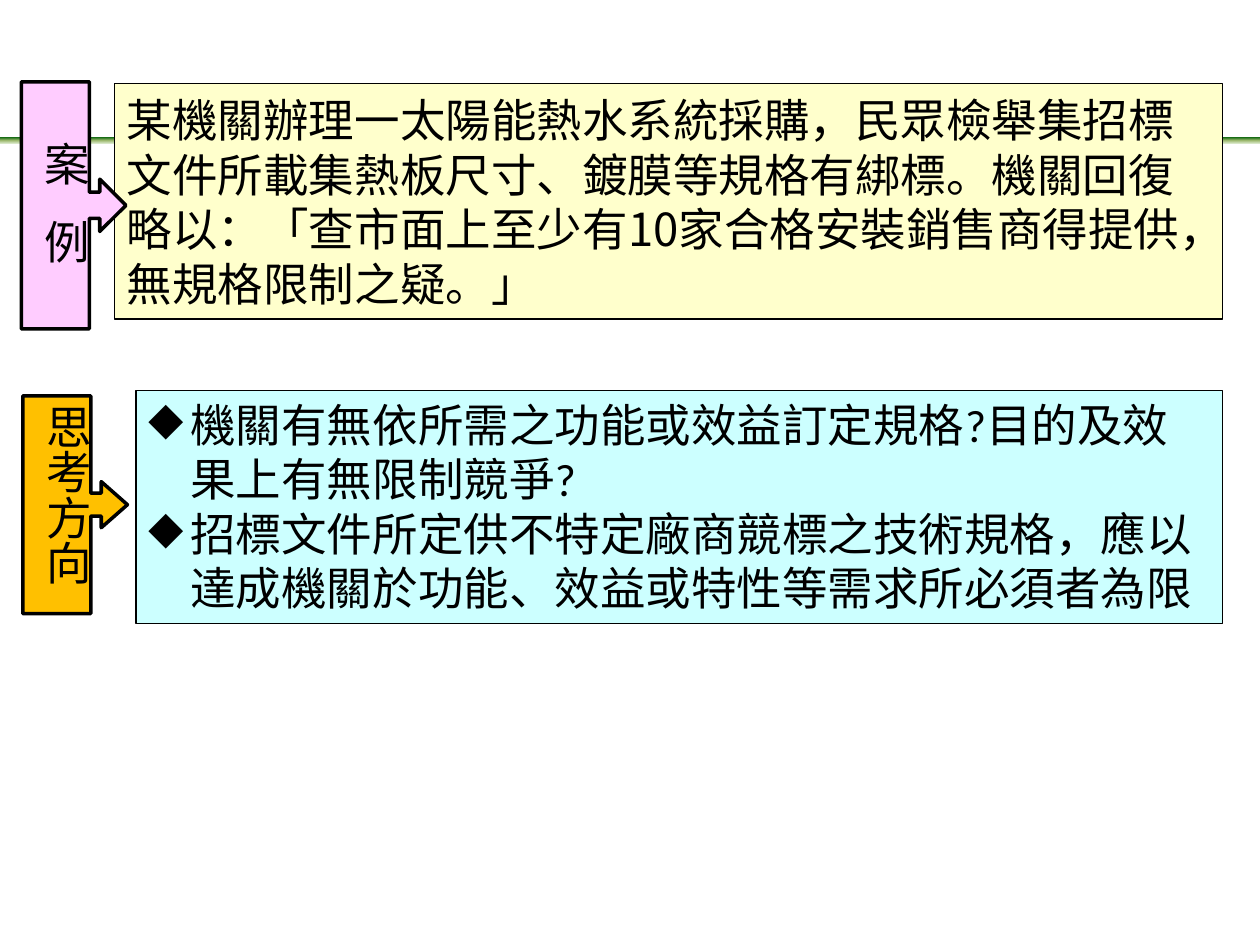
from copy import deepcopy

from lxml.etree import SubElement
from pptx import Presentation
from pptx.dml.color import RGBColor
from pptx.enum.shapes import MSO_SHAPE
from pptx.enum.text import MSO_ANCHOR, MSO_AUTO_SIZE, PP_ALIGN
from pptx.oxml.ns import qn
from pptx.util import Cm, Pt

COLORS = {
    "ink": "000000",
    "case_box": "FFFFCC",
    "case_tag": "FFCCFF",
    "thought_box": "CCFFFF",
    "thought_tag": "FFC000",
}
RULE_STOPS = [(0, "156B13"), (0.5, "9CB86E"), (1, "DDEBCF")]
CASE_FONT, BODY_FONT = "Noto Sans CJK SC", "Calibri"
HANGING = Cm(0.85)

CASE_TEXT = (
    "某機關辦理一太陽能熱水系統採購，民眾檢舉集招標文件所載集熱板尺寸、鍍膜等規格有綁標。"
    "機關回復略以：「查市面上至少有10家合格安裝銷售商得提供，無規格限制之疑。」"
)
THOUGHT_LINES = [
    (True, "機關有無依所需之功能或效益訂定規格?目的及效"),
    (False, "果上有無限制競爭?"),
    (True, "招標文件所定供不特定廠商競標之技術規格，應以"),
    (False, "達成機關於功能、效益或特性等需求所必須者為限"),
]


def rgb(name):
    return RGBColor.from_string(COLORS[name])


def style_runs(para, font_name):
    for span in para.runs:
        span.font.size = Pt(26)
        span.font.name = font_name
        span.font.color.rgb = rgb("ink")
        SubElement(span.font._element, qn("a:ea"), typeface=font_name)


def add_filled(page, preset, place, fill, line_width):
    shape = page.shapes.add_shape(preset, *map(Cm, place))
    shape.shadow.inherit = False
    shape.fill.solid()
    shape.fill.fore_color.rgb = rgb(fill)
    shape.line.color.rgb = rgb("ink")
    shape.line.width = Pt(line_width)
    return shape


def add_rule(page):
    """Draw the thin gradient band across the page."""
    band = page.shapes.add_shape(MSO_SHAPE.RECTANGLE, 0, Cm(2.77), Cm(25.4), Cm(0.13))
    band.shadow.inherit = False
    band.line.fill.background()
    band.fill.gradient()
    band.fill.gradient_angle = 270
    stop_list = band._element.spPr.find(".//" + qn("a:gsLst"))
    stop_list.append(deepcopy(stop_list[0]))
    for stop, (position, color) in zip(band.fill.gradient_stops, RULE_STOPS):
        stop.position = position
        stop.color.rgb = RGBColor.from_string(color)


def add_case_box(page):
    box = add_filled(page, MSO_SHAPE.RECTANGLE, (2.31, 1.68, 22.33, 4.75), "case_box", 0.75)
    box.text_frame.text = CASE_TEXT
    para = box.text_frame.paragraphs[0]
    para.alignment = PP_ALIGN.LEFT
    para.line_spacing = Pt(31.3)
    style_runs(para, CASE_FONT)


def add_tag(page, place, fill, arrow_size):
    tag = add_filled(page, MSO_SHAPE.RIGHT_ARROW_CALLOUT, place, fill, 2)
    for index, value in enumerate((arrow_size, arrow_size, 0.25, 0.65)):
        tag.adjustments[index] = value


def add_vertical_label(page, place, text, letter_gap=0):
    """Add top-to-bottom text; letter_gap is extra spacing in points."""
    box = page.shapes.add_textbox(*map(Cm, place))
    frame = box.text_frame
    frame.word_wrap = True
    frame.auto_size = MSO_AUTO_SIZE.SHAPE_TO_FIT_TEXT
    frame._txBody.bodyPr.set("vert", "eaVert")
    frame.text = text
    para = frame.paragraphs[0]
    para.alignment = PP_ALIGN.CENTER
    style_runs(para, BODY_FONT)
    if letter_gap:
        para.runs[0].font._element.set("spc", str(round(letter_gap * 100)))


def set_hanging(para, bulleted):
    properties = para._p.get_or_add_pPr()
    properties.set("marL", str(HANGING))
    properties.set("indent", str(-HANGING if bulleted else 0))
    if bulleted:
        SubElement(properties, qn("a:buChar"), char="◆")
    else:
        SubElement(properties, qn("a:buNone"))


def add_thought_box(page):
    box = add_filled(page, MSO_SHAPE.RECTANGLE, (2.74, 7.87, 21.9, 4.7), "thought_box", 0.75)
    frame = box.text_frame
    frame.vertical_anchor = MSO_ANCHOR.TOP
    frame.text = "\n".join(text for _, text in THOUGHT_LINES)
    for para, (bulleted, _) in zip(frame.paragraphs, THOUGHT_LINES):
        para.alignment = PP_ALIGN.LEFT
        set_hanging(para, bulleted)
        style_runs(para, BODY_FONT)


def main():
    deck = Presentation()
    deck.slide_width, deck.slide_height = Cm(25.4), Cm(19.05)
    page = deck.slides.add_slide(deck.slide_layouts[6])
    add_rule(page)
    add_case_box(page)
    add_tag(page, (0.43, 1.65, 2.11, 4.98), "case_tag", 0.25)
    add_vertical_label(page, (0.3, 1.93, 1.63, 3.63), "案 例", letter_gap=6.3)
    add_tag(page, (0.46, 7.98, 2.11, 4.39), "thought_tag", 0.22)
    add_vertical_label(page, (0.41, 7.9, 1.63, 4.72), "思考方向")
    add_thought_box(page)
    deck.save("out.pptx")


if __name__ == "__main__":
    main()
